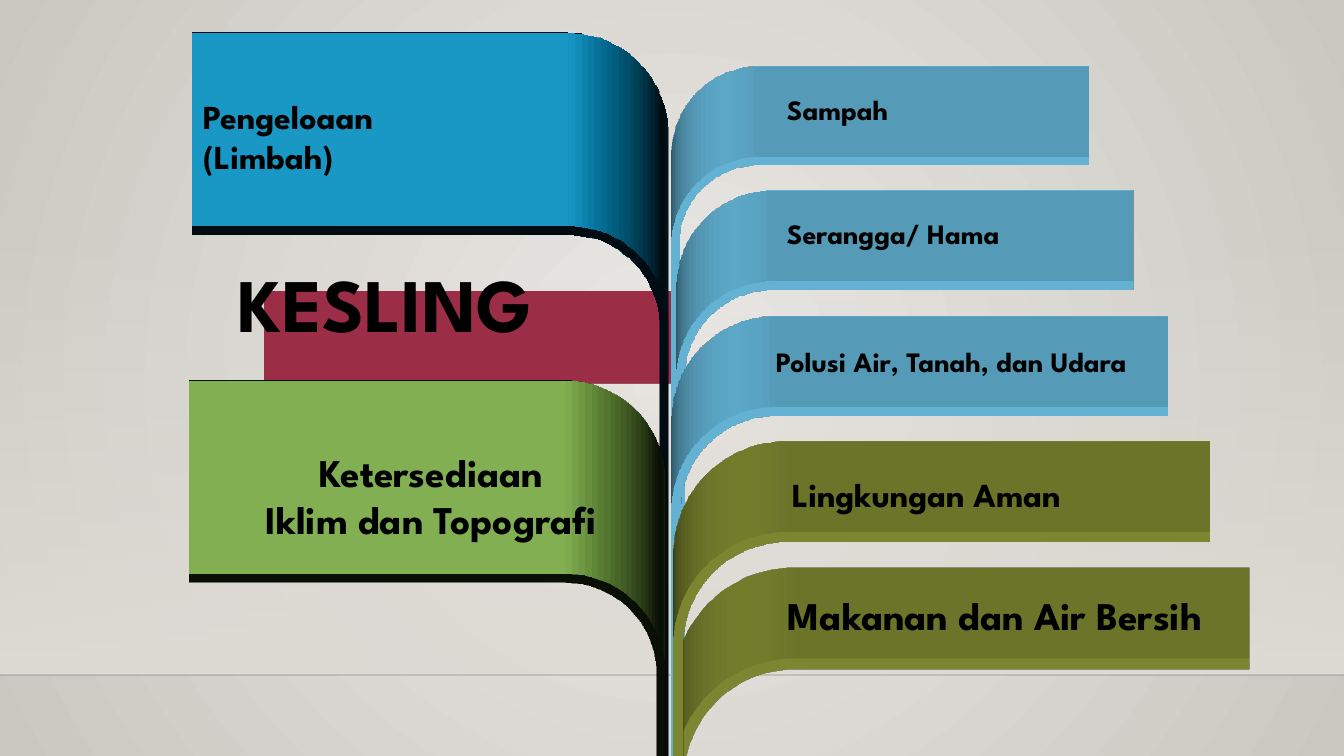
from lxml import etree
from pptx import Presentation
from pptx.dml.color import RGBColor
from pptx.enum.shapes import MSO_CONNECTOR, MSO_SHAPE
from pptx.enum.text import MSO_ANCHOR, MSO_AUTO_SIZE, PP_ALIGN
from pptx.oxml.ns import qn
from pptx.util import Emu, Pt

RECT, BENT_ARROW = MSO_SHAPE.RECTANGLE, MSO_SHAPE.BENT_ARROW
STRAIGHT = MSO_CONNECTOR.STRAIGHT
TOP, NO_FIT = MSO_ANCHOR.TOP, MSO_AUTO_SIZE.NONE
LEFT, CENTER = PP_ALIGN.LEFT, PP_ALIGN.CENTER
WIDTH, HEIGHT = 1344, 756
SCALE = 914400 / 100.8
FONT = "League Spartan"
ARROW_HEIGHT = 695
ARROW_SHAPE = (0.019, 0.018, 0, 0.21)
RAISED = 65  # points in front of the page

# Content: lines, size, alignment, text box (left, top, width, height)
TITLE = (["KESLING"], 54, CENTER, (224, 252, 323, 102))
# Ribbons: left, top, width, flipped, depth in points, colour, label
RIBBONS = [
    (193, 176, 476, True, 276, "00B0F0",
     (["Pengeloaan", "(Limbah)"], 24, LEFT, (193, 91, 221, 92))),
    (190, 524, 476, True, 276, "92D050",
     (["Ketersediaan", "Iklim dan Topografi"], 28, CENTER, (237, 443, 388, 105))),
    (672, 108, 417, False, 130, "76D6FF",
     (["Sampah"], 20, LEFT, (777, 88, 135, 44))),
    (677, 232, 457, False, 130, "76D6FF",
     (["Serangga/ Hama"], 20, LEFT, (777, 212, 258, 44))),
    (672, 357, 496, False, 130, "76D6FF",
     (["Polusi Air, Tanah, dan Udara"], 20, LEFT, (766, 340, 402, 44))),
    (674, 608, 576, False, 130, "94A038",
     (["Makanan dan Air Bersih"], 28, LEFT, (778, 586, 478, 57))),
    (674, 482, 536, False, 130, "94A038",
     (["Lingkungan Aman"], 24, LEFT, (782, 469, 321, 50))),
]


def px(value):
    return Emu(round(value * SCALE))


def color(code):
    return RGBColor.from_string(code)


def gradient(stops, angle=None):
    """Gradient fill from (percent, colour, opacity) stops; no angle means circular."""
    fill = etree.Element(qn("a:gradFill"), rotWithShape="1")
    stop_list = etree.SubElement(fill, qn("a:gsLst"))
    for position, code, opacity in stops:
        stop = etree.SubElement(stop_list, qn("a:gs"), pos=str(position * 1000))
        tint = etree.SubElement(stop, qn("a:srgbClr"), val=code)
        etree.SubElement(tint, qn("a:alpha"), val=str(opacity * 1000))
    if angle is None:
        circle = etree.SubElement(fill, qn("a:path"), path="circle")
        etree.SubElement(circle, qn("a:fillToRect"), l="50000", t="50000", r="50000", b="50000")
    else:
        etree.SubElement(fill, qn("a:lin"), ang=str(angle * 60000), scaled="0")
    return fill


def replace_solid(properties, fill):
    properties.replace(properties.find(qn("a:solidFill")), fill)


def add_plain(shapes, kind, place, code):
    shape = shapes.add_shape(kind, *map(px, place))
    shape.shadow.inherit = False
    shape.line.fill.background()
    shape.fill.solid()
    shape.fill.fore_color.rgb = color(code)
    return shape


def add_arrow(shapes, place, flipped, depth, raised, code):
    """Bent arrow extruded upwards, seen from obliquely above."""
    arrow = add_plain(shapes, BENT_ARROW, place, code)
    for number, value in enumerate(ARROW_SHAPE):
        arrow.adjustments[number] = value
    properties = arrow.element.spPr
    if flipped:
        properties.find(qn("a:xfrm")).set("flipH", "1")
    scene = etree.SubElement(properties, qn("a:scene3d"))
    etree.SubElement(scene, qn("a:camera"), prst="legacyObliqueTop")
    etree.SubElement(scene, qn("a:lightRig"), rig="threePt", dir="t")
    etree.SubElement(properties, qn("a:sp3d"), z=str(Pt(raised)), extrusionH=str(Pt(depth)))


def write(box, lines, size, align, place):
    box.left, box.top, box.width, box.height = map(px, place)
    frame = box.text_frame
    frame.word_wrap = False
    frame.auto_size = NO_FIT
    frame.vertical_anchor = TOP
    for number, line in enumerate(lines):
        para = frame.add_paragraph() if number else frame.paragraphs[0]
        para.alignment = align
        span = para.add_run()
        span.text = line
        span.font.name, span.font.size, span.font.bold = FONT, Pt(size), True
        span.font.color.rgb = color("000000")


def main():
    deck = Presentation()
    deck.slide_width, deck.slide_height = px(WIDTH), px(HEIGHT)
    page = deck.slides.add_slide(deck.slide_layouts[5])

    # Background wall and floor line
    page.background.fill.solid()
    replace_solid(page.element.find(".//" + qn("p:bgPr")),
                  gradient([(0, "ECEAE7", 100), (100, "CAC7C1", 100)]))
    wall = add_plain(page.shapes, RECT, (0, 223, WIDTH, 452), "DFDBD5")
    replace_solid(wall.element.spPr,
                  gradient([(0, "DFDBD5", 0), (100, "DFDBD5", 100)], 90))
    floor = page.shapes.add_connector(STRAIGHT, 0, px(675), px(WIDTH), px(675))
    floor.line.width = Pt(1)
    floor.line.color.rgb = color("000001")
    tint = floor.element.spPr.find(".//" + qn("a:srgbClr"))
    etree.SubElement(tint, qn("a:alpha"), val="20000")
    etree.SubElement(floor.element.spPr, qn("a:effectLst"))

    # Flat band behind the title
    add_arrow(page.shapes, (265, 383, 416, 0), True, 130, 0, "B71E42")

    # Ribbons grouped with their labels
    for left, top, width, flipped, depth, code, label in RIBBONS:
        shapes = page.shapes.add_group_shape().shapes
        add_arrow(shapes, (left, top, width, ARROW_HEIGHT), flipped, depth, RAISED, code)
        write(shapes.add_textbox(0, 0, 0, 0), *label)

    # Title in front of the band
    title = page.shapes.title
    write(title, *TITLE)
    title.element.getparent().append(title.element)

    deck.save("out.pptx")


if __name__ == "__main__":
    main()
